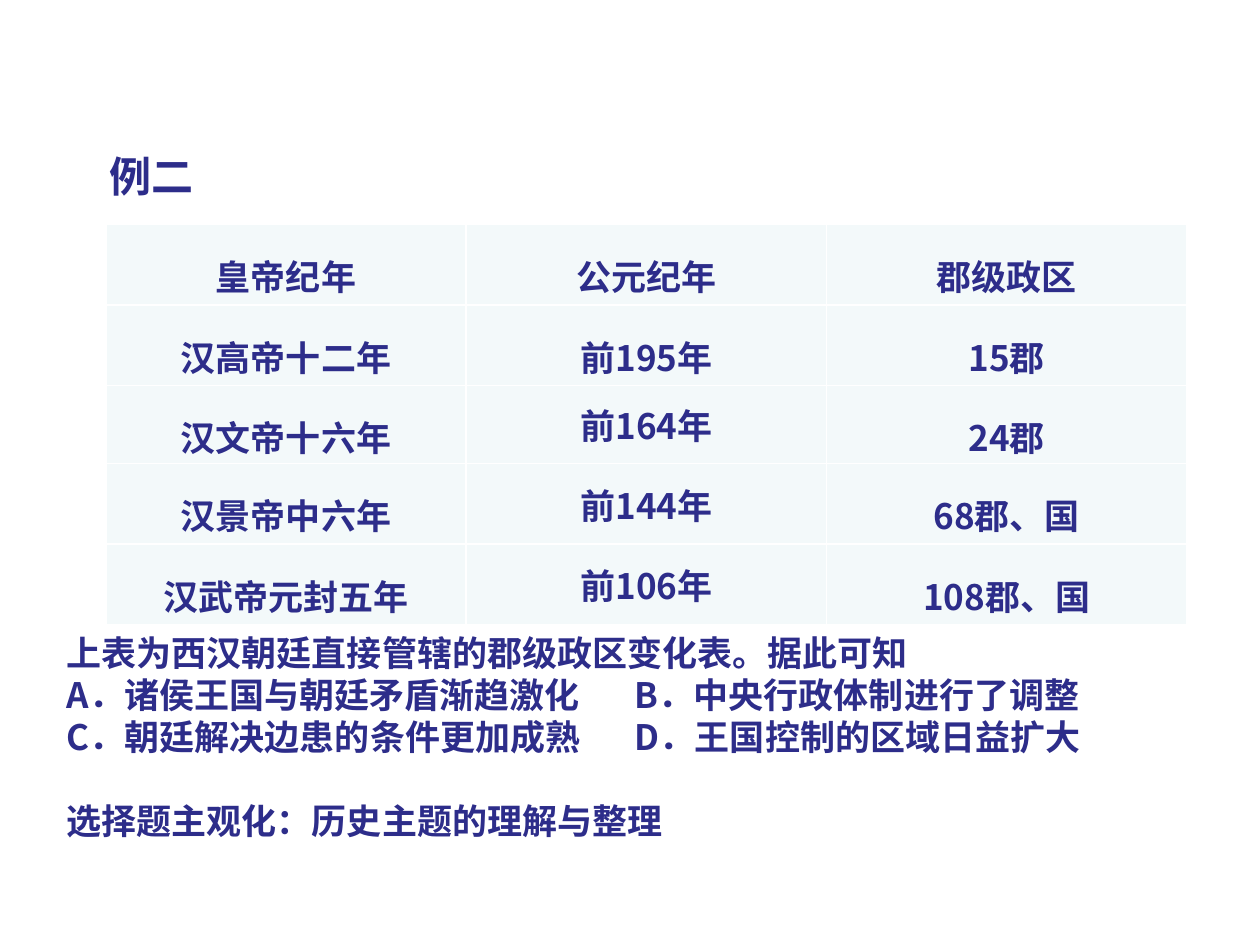
from dataclasses import dataclass

from lxml import etree
from pptx import Presentation
from pptx import util as u
from pptx.dml import color
from pptx.enum import text
from pptx.oxml import ns

FONT = "Noto Sans CJK SC"
NAVY, PALE, WHITE = "2D2D8A", "F3F9FA", "FFFFFF"
TABLE_ROWS = [
    ("皇帝纪年", "公元纪年", "郡级政区"),
    ("汉高帝十二年", "前195年", "15郡"),
    ("汉文帝十六年", "前164年", "24郡"),
    ("汉景帝中六年", "前144年", "68郡、国"),
    ("汉武帝元封五年", "前106年", "108郡、国"),
]
ROW_HEIGHTS = (0.64, 0.64, 0.62, 0.64, 0.64)
COL_WIDTH = 2.86


@dataclass
class Line:
    words: str
    size: int = 20
    pitch: int = 24
    before: int = 0
    tab: float = 0


@dataclass
class Block:
    left: float
    top: float
    width: float
    height: float
    lines: list[Line]


TITLE = Block(0.77, 1.14, 5, 0.51, [Line("例二", 24, 29)])
QUESTION = Block(0.43, 4.96, 9.22, 2.1, [
    Line("上表为西汉朝廷直接管辖的郡级政区变化表。据此可知"),
    Line("A．诸侯王国与朝廷矛盾渐趋激化\tB．中央行政体制进行了调整", tab=4.51),
    Line("C．朝廷解决边患的条件更加成熟\tD．王国控制的区域日益扩大", tab=4.51),
    Line("选择题主观化：历史主题的理解与整理", before=24),
])


def rgb(value: str) -> color.RGBColor:
    return color.RGBColor.from_string(value)


def add_run(p, words: str, size: int) -> None:
    r = p.add_run()
    r.text = words
    r.font.name, r.font.size, r.font.bold = FONT, u.Pt(size), True
    r.font.color.rgb = rgb(NAVY)
    etree.SubElement(r.font._element, ns.qn("a:ea"), typeface=FONT)


def add_tab_stop(p, inches: float) -> None:
    stops = etree.SubElement(p._p.get_or_add_pPr(), ns.qn("a:tabLst"))
    etree.SubElement(stops, ns.qn("a:tab"), pos=str(u.Inches(inches)), algn="l")


def add_block(s, block: Block) -> None:
    box = (block.left, block.top, block.width, block.height)
    tf = s.shapes.add_textbox(*map(u.Inches, box)).text_frame
    tf.word_wrap = True
    for i, line in enumerate(block.lines):
        p = tf.add_paragraph() if i else tf.paragraphs[0]
        p.line_spacing, p.space_before = u.Pt(line.pitch), u.Pt(line.before)
        if line.tab:
            add_tab_stop(p, line.tab)
        add_run(p, line.words, line.size)


def add_borders(cell) -> None:
    tc_pr = cell._tc.get_or_add_tcPr()
    for i, side in enumerate(("lnL", "lnR", "lnT", "lnB")):
        ln = etree.Element(ns.qn(f"a:{side}"), w=str(u.Pt(1)))
        fill = etree.SubElement(ln, ns.qn("a:solidFill"))
        etree.SubElement(fill, ns.qn("a:srgbClr"), val=WHITE)
        tc_pr.insert(i, ln)


def fill_cell(cell, words: str, centred: bool) -> None:
    cell.fill.solid()
    cell.fill.fore_color.rgb = rgb(PALE)
    cell.margin_left = cell.margin_right = u.Inches(0.07)
    cell.margin_top = cell.margin_bottom = 0
    p = cell.text_frame.paragraphs[0]
    p.alignment = text.PP_ALIGN.CENTER
    if centred:
        cell.vertical_anchor = text.MSO_ANCHOR.MIDDLE
    else:
        p.line_spacing = 1.5
    add_run(p, words, 20)
    add_borders(cell)


def add_reign_table(s) -> None:
    n_rows, n_cols = len(TABLE_ROWS), len(TABLE_ROWS[0])
    box = (0.84, 1.78, COL_WIDTH * n_cols, sum(ROW_HEIGHTS))
    table = s.shapes.add_table(n_rows, n_cols, *map(u.Inches, box)).table
    for column in table.columns:
        column.width = u.Inches(COL_WIDTH)
    for i, (row, height) in enumerate(zip(TABLE_ROWS, ROW_HEIGHTS)):
        table.rows[i].height = u.Inches(height)
        for j, words in enumerate(row):
            fill_cell(table.cell(i, j), words, centred=j == 1 and i > 1)


def main() -> None:
    """Build the slide on Western Han commanderies and save it."""
    prs = Presentation()
    prs.slide_width, prs.slide_height = u.Inches(10), u.Inches(7.5)
    s = prs.slides.add_slide(prs.slide_layouts[6])
    add_reign_table(s)
    add_block(s, QUESTION)
    add_block(s, TITLE)
    prs.save("out.pptx")


if __name__ == "__main__":
    main()
